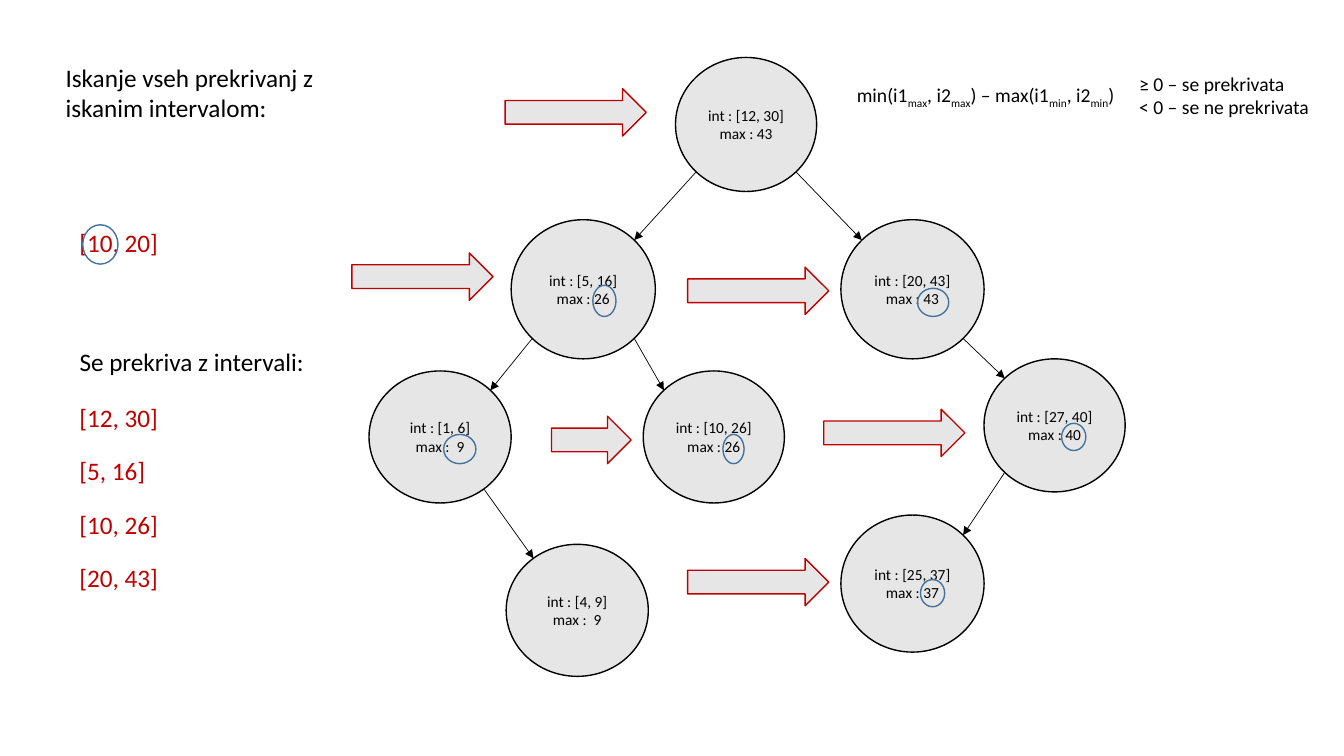
from math import cos, radians, sin

from lxml.etree import SubElement
from pptx import Presentation
from pptx.dml.color import RGBColor
from pptx.enum.shapes import MSO_CONNECTOR, MSO_SHAPE
from pptx.enum.text import MSO_ANCHOR, MSO_AUTO_SIZE, PP_ALIGN
from pptx.oxml.ns import qn
from pptx.util import Emu, Pt

SCALE = 9144
FONT = "Calibri"
COLORS = {
    "ink": "000000",
    "red": "C00000",
    "gray": "E7E6E6",
    "blue": "43739E",
}


def px(*values):
    return [Emu(round(v * SCALE)) for v in values]


def color(name):
    return RGBColor.from_string(COLORS[name])


class Board:
    """Draws the parts of an interval tree on one slide."""

    def __init__(self, slide):
        self.slide = slide
        self.shapes = slide.shapes

    def style(self, frame, size, name="ink", align=PP_ALIGN.LEFT):
        for para in frame.paragraphs:
            para.alignment = align
            for run in para.runs:
                run.font.name = FONT
                run.font.size = Pt(size)
                run.font.color.rgb = color(name)

    def title(self, text, *box):
        head = self.shapes.title
        head.left, head.top, head.width, head.height = px(*box)
        frame = head.text_frame
        frame.text = text
        frame.word_wrap = True
        frame.auto_size = MSO_AUTO_SIZE.NONE
        frame.vertical_anchor = MSO_ANCHOR.TOP
        self.style(frame, 18)

    def text(self, text, *box, size=18, name="ink"):
        frame = self.shapes.add_textbox(*px(*box)).text_frame
        frame.word_wrap = True
        frame.auto_size = MSO_AUTO_SIZE.SHAPE_TO_FIT_TEXT
        frame.text = text
        self.style(frame, size, name)
        return frame

    def formula(self, parts, *box):
        frame = self.text("", *box)
        for text, sub in parts:
            run = frame.paragraphs[0].add_run()
            run.text = text
            if sub:
                run._r.get_or_add_rPr().set("baseline", "-25000")
        self.style(frame, 14)

    def shape(self, kind, box, line, fill=None):
        item = self.shapes.add_shape(kind, *px(*box))
        item.shadow.inherit = False
        item.line.color.rgb = color(line)
        item.line.width = Pt(1)
        if fill:
            item.fill.solid()
            item.fill.fore_color.rgb = color(fill)
        else:
            item.fill.background()
        return item

    def node(self, span, top, box):
        frame = self.shape(MSO_SHAPE.OVAL, box, "ink", "gray").text_frame
        frame.text = f"int : {span}\nmax : {top}"
        frame.vertical_anchor = MSO_ANCHOR.MIDDLE
        self.style(frame, 11, align=PP_ALIGN.CENTER)

    def ring(self, *box):
        self.shape(MSO_SHAPE.OVAL, box, "blue")

    def arrow(self, left, top, width=140):
        self.shape(MSO_SHAPE.RIGHT_ARROW, (left, top, width, 47), "red", "gray")

    def edge(self, start, end, angle=45):
        side = 1 if end[0] > start[0] else -1
        points = []
        for (left, top, width, height), way in ((start, 1), (end, -1)):
            points.append(left + width / 2 * (1 + way * side * cos(radians(angle))))
            points.append(top + height / 2 * (1 + way * sin(radians(angle))))
        link = self.shapes.add_connector(MSO_CONNECTOR.STRAIGHT, *px(*points))
        link.line.color.rgb = color("ink")
        link.line.width = Pt(0.5)
        SubElement(link.line._get_or_add_ln(), qn("a:tailEnd"), type="triangle")
        SubElement(link._element.spPr, qn("a:effectLst"))


NODES = {
    "[12, 30]": ("43", (670, 57, 140, 133)),
    "[5, 16]": ("26", (507, 218, 143, 138)),
    "[20, 43]": ("43", (834, 218, 142, 138)),
    "[1, 6]": (" 9", (366, 368, 141, 131)),
    "[10, 26]": ("26", (638, 368, 140, 131)),
    "[27, 40]": ("40", (976, 356, 140, 132)),
    "[25, 37]": ("37", (834, 511, 142, 136)),
    "[4, 9]": (" 9", (502, 540, 141, 131)),
}
EDGES = [
    ("[12, 30]", "[20, 43]", 45),
    ("[12, 30]", "[5, 16]", 45),
    ("[5, 16]", "[1, 6]", 45),
    ("[5, 16]", "[10, 26]", 45),
    ("[20, 43]", "[27, 40]", 45),
    ("[27, 40]", "[25, 37]", 45),
    ("[1, 6]", "[4, 9]", 52),
]
ARROWS = [
    (501, 88), (349, 251), (682, 265), (547, 413, 79), (817, 406), (682, 554),
]
RINGS = [
    (82, 223, 35, 39), (588, 283, 23, 31), (440, 431, 32, 29),
    (910, 286, 31, 28), (717, 431, 21, 29), (1053, 420, 24, 27),
    (913, 575, 24, 27),
]
HITS = ["[12, 30]", "[5, 16]", "[10, 26]", "[20, 43]"]
FORMULA = [
    ("min(i1", False), ("max", True), (", i2", False), ("max", True),
    (") – max(i1", False), ("min", True), (", i2", False), ("min", True),
    (")", False),
]


def main():
    deck = Presentation()
    deck.slide_width, deck.slide_height = px(1333, 750)
    board = Board(deck.slides.add_slide(deck.slide_layouts[5]))

    board.title("Iskanje vseh prekrivanj z iskanim intervalom:", 55, 57, 341, 71)
    for span, (top, box) in NODES.items():
        board.node(span, top, box)
    for start, end, angle in EDGES:
        board.edge(NODES[start][1], NODES[end][1], angle)

    board.text("[10, 20]", 69, 221, 157, 40, name="red")
    board.text("Se prekriva z intervali:", 69, 339, 252, 71)
    for i, span in enumerate(HITS):
        board.text(span, 69, 394 + 53 * i, 113, 40, name="red")

    for place in ARROWS:
        board.arrow(*place)
    for box in RINGS:
        board.ring(*box)

    board.formula(FORMULA, 840, 77, 326, 34)
    board.text("≥ 0 – se prekrivata\n< 0 – se ne prekrivata", 1120, 66, 191, 88, size=14)
    deck.save("out.pptx")


if __name__ == "__main__":
    main()
